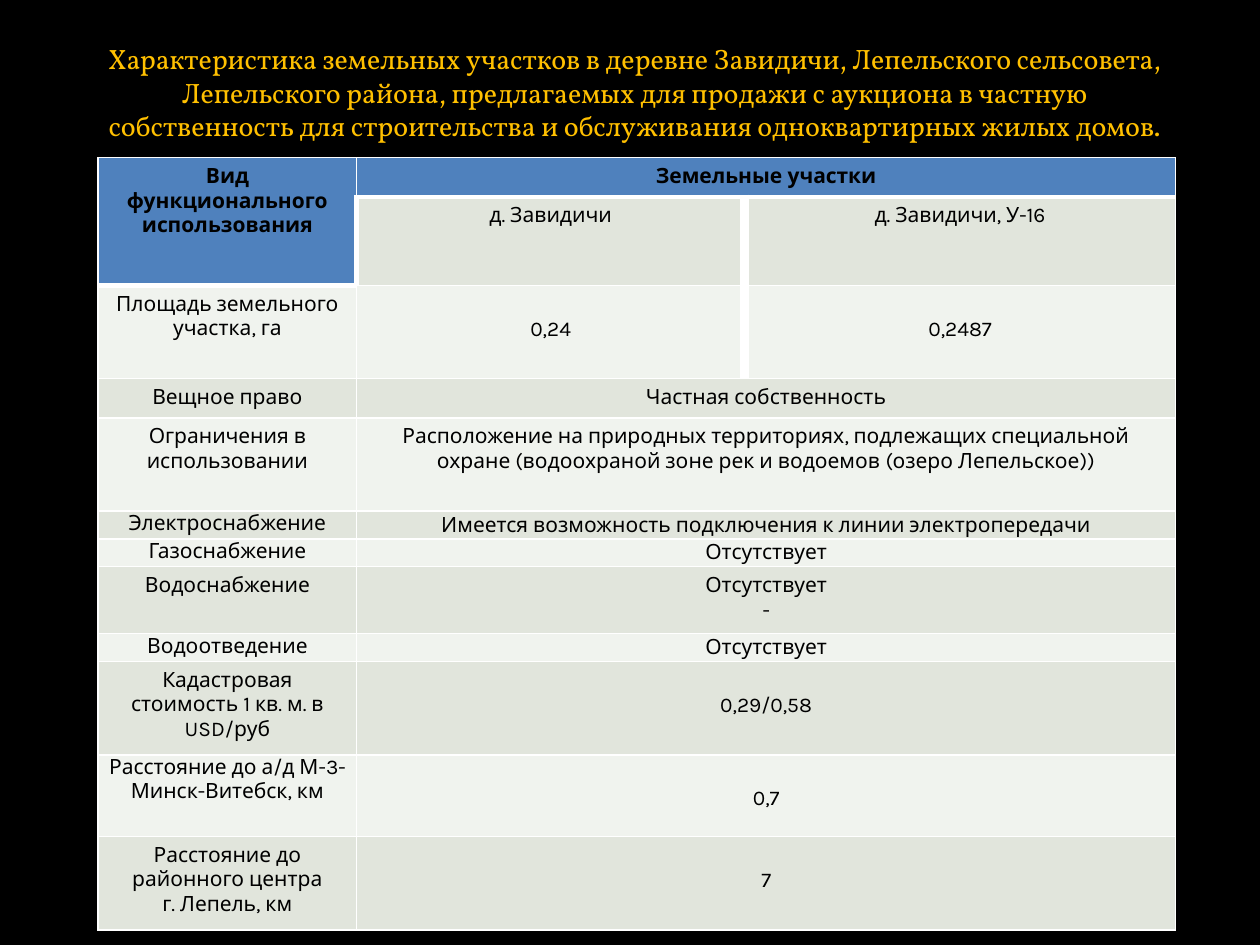
from dataclasses import dataclass

from lxml.etree import SubElement
from pptx import Presentation
from pptx.dml.color import RGBColor
from pptx.enum.text import MSO_ANCHOR as Anchor, MSO_AUTO_SIZE as AutoSize, PP_ALIGN as Align
from pptx.oxml.ns import qn
from pptx.util import Cm, Pt

HEADER, DARK, LIGHT = "4F81BD", "E1E5DC", "F0F3EE"
BLACK, WHITE, GOLD = "000000", "FFFFFF", "FFC000"
COLUMNS = (5.21, 7.82, 8.69)
TITLE = (
    "Характеристика земельных участков в деревне Завидичи, Лепельского сельсовета, "
    "Лепельского района, предлагаемых для продажи с аукциона в частную собственность "
    "для строительства и обслуживания одноквартирных жилых домов."
)


@dataclass(frozen=True)
class Row:
    height: float
    texts: tuple[str, ...]
    tight_label: bool = False
    tight_value: bool = False
    lowered: bool = False


ROWS = (
    Row(0.79, ("Вид функционального использования", "Земельные участки")),
    Row(1.09, ("", "д. Завидичи", "д. Завидичи, У-16")),
    Row(1.88, ("Площадь земельного участка, га", "0,24", "0,2487"), lowered=True),
    Row(0.79, ("Вещное право", "Частная собственность")),
    Row(1.88, ("Ограничения в использовании",
               "Расположение на природных территориях, подлежащих специальной охране "
               "(водоохраной зоне рек и водоемов (озеро Лепельское))")),
    Row(0.56, ("Электроснабжение", "Имеется возможность подключения к линии электропередачи"),
        tight_label=True, tight_value=True),
    Row(0.56, ("Газоснабжение", "Отсутствует"), tight_label=True, tight_value=True),
    Row(1.35, ("Водоснабжение", "Отсутствует\n-")),
    Row(0.56, ("Водоотведение", "Отсутствует"), tight_label=True, tight_value=True),
    Row(1.88, ("Кадастровая стоимость 1 кв. м. в USD/руб", "0,29/0,58"), lowered=True),
    Row(1.65, ("Расстояние до а/д М-3- Минск-Витебск, км", "0,7"), tight_label=True, lowered=True),
    Row(1.88, ("Расстояние до районного центра\nг. Лепель, км", "7"), lowered=True),
)


def color(value: str) -> RGBColor:
    return RGBColor.from_string(value)


def style_paragraph(para, font_name: str, size: float, value: str, bold: bool = False) -> None:
    para.alignment = Align.CENTER
    para.font.name = font_name
    para.font.size = Pt(size)
    para.font.bold = bold
    para.font.color.rgb = color(value)


def border_widths(row: int, column: int) -> dict[str, int]:
    plots = row in (1, 2)
    return {
        "a:lnL": 6 if plots and column == 2 else 3 if row == 1 and column == 1 else 1,
        "a:lnR": 6 if plots and column == 1 else 3 if row == 1 and column == 0 else 1,
        "a:lnT": 3 if (row == 1 and column) or (row == 2 and not column) else 1,
        "a:lnB": 3 if row == 0 or (row == 1 and not column) else 1,
    }


def draw_borders(cell, widths: dict[str, int]) -> None:
    properties = cell._tc.get_or_add_tcPr()
    for position, (tag, width) in enumerate(widths.items()):
        line = SubElement(properties, qn(tag), w=str(Pt(width)))
        fill = SubElement(line, qn("a:solidFill"))
        SubElement(fill, qn("a:srgbClr"), val=WHITE)
        properties.remove(line)
        properties.insert(position, line)


def fill_cell(cell, text: str, fill: str, bold: bool, tight: bool, lowered: bool) -> None:
    cell.text = text
    cell.fill.solid()
    cell.fill.fore_color.rgb = color(fill)
    cell.margin_left = cell.margin_right = Cm(0.18 if tight else 0.25)
    cell.margin_top = cell.margin_bottom = Cm(0 if tight else 0.13)
    if lowered:
        cell.margin_top = Cm(0.63)
    for para in cell.text_frame.paragraphs:
        style_paragraph(para, "Karla", 12, BLACK, bold)


def add_title(page) -> None:
    box = page.shapes.title
    box.left, box.top, box.width, box.height = Cm(1.7), Cm(0.71), Cm(22.2), Cm(2.31)
    frame = box.text_frame
    frame.text = TITLE
    frame.word_wrap = True
    frame.auto_size = AutoSize.SHAPE_TO_FIT_TEXT
    frame.vertical_anchor = Anchor.TOP
    style_paragraph(frame.paragraphs[0], "Vollkorn", 16, GOLD)


def add_plot_table(page) -> None:
    height = sum(row.height for row in ROWS)
    table = page.shapes.add_table(
        len(ROWS), len(COLUMNS), Cm(1.98), Cm(3.18), Cm(sum(COLUMNS)), Cm(height)
    ).table
    table.first_row = table.horz_banding = False
    for column, width in zip(table.columns, COLUMNS):
        column.width = Cm(width)
    for r, row in enumerate(ROWS):
        table.rows[r].height = Cm(row.height)
        for c in range(len(COLUMNS)):
            cell = table.cell(r, c)
            header = r == 0 or (r == 1 and c == 0)
            fill = HEADER if header else DARK if r % 2 else LIGHT
            text = row.texts[c] if c < len(row.texts) else ""
            tight = row.tight_value if c else row.tight_label
            fill_cell(cell, text, fill, header, tight, row.lowered and c > 0)
            if c and row.tight_value:
                cell.vertical_anchor = Anchor.MIDDLE
            draw_borders(cell, border_widths(r, c))
        if len(row.texts) == 2:
            table.cell(r, 1).merge(table.cell(r, 2))
    table.cell(0, 0).merge(table.cell(1, 0))


def main() -> None:
    deck = Presentation()
    deck.slide_width, deck.slide_height = Cm(25.4), Cm(19.05)
    page = deck.slides.add_slide(deck.slide_layouts[5])
    page.background.fill.solid()
    page.background.fill.fore_color.rgb = color(BLACK)
    add_title(page)
    add_plot_table(page)
    deck.save("out.pptx")


if __name__ == "__main__":
    main()
